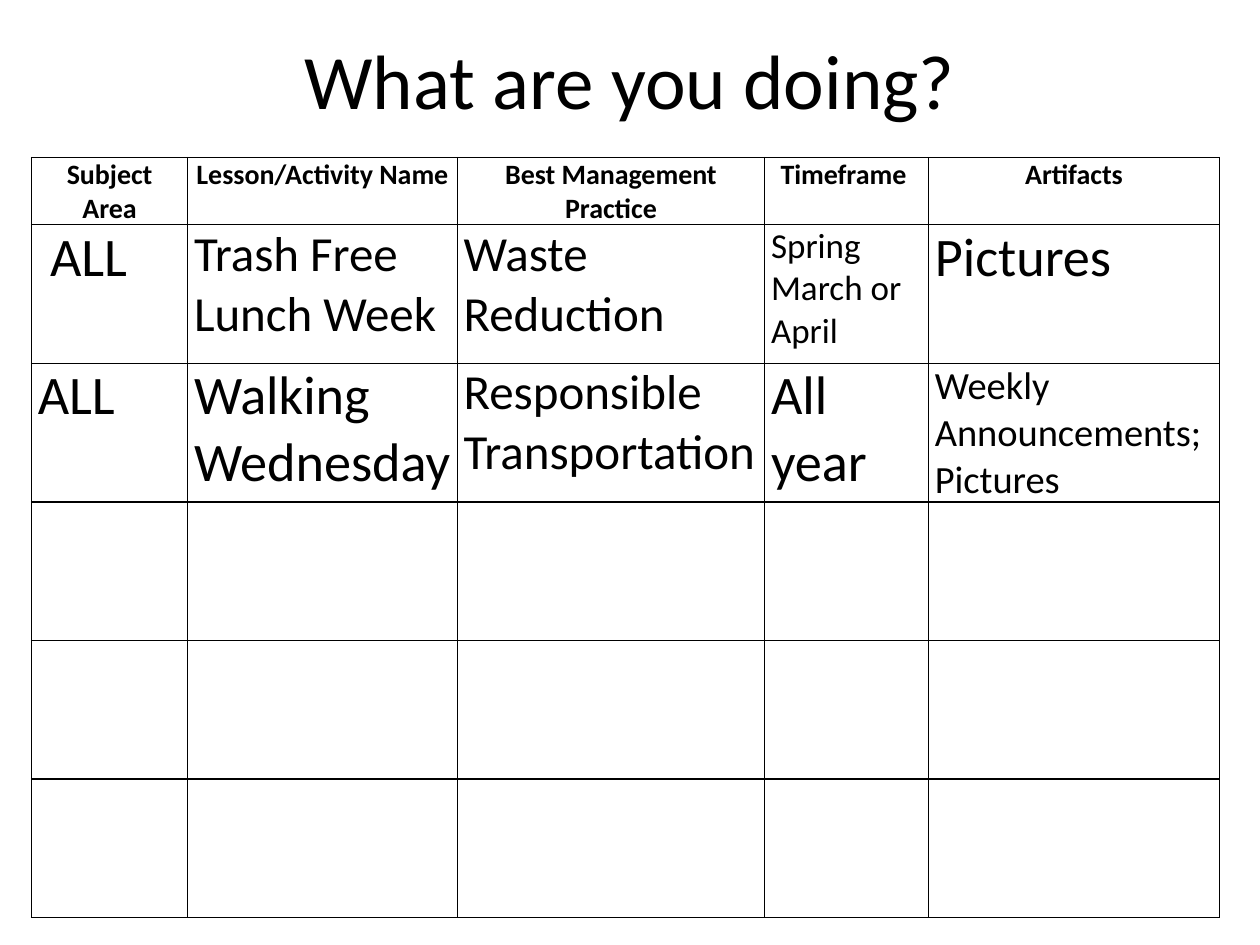
import pptx
import pptx.util
import pptx.dml.color
import pptx.enum.text
import pptx.oxml
import pptx.oxml.ns

COLORS = {"ink": "000000", "page": "FFFFFF"}
FONT = "Calibri"
HEADING = "What are you doing?"
HEADING_SIZE, HEADER_SIZE = 44, 16
HEADERS = ["Subject Area", "Lesson/Activity Name", "Best Management Practice",
           "Timeframe ", "Artifacts"]
# Each entry: paragraphs of the cell, text size
ACTIVITIES = [
    [([" ALL"], 31), (["Trash Free Lunch Week"], 28), (["Waste Reduction"], 28),
     (["Spring", "March or April"], 20), (["Pictures"], 31)],
    [(["ALL"], 31), (["Walking Wednesday"], 31), (["Responsible Transportation"], 28),
     (["All year"], 31), (["Weekly Announcements; Pictures"], 22)],
]
BLANK_ROWS = 3
COLUMN_WIDTHS = [1.24, 2.14, 2.44, 1.3, 2.31]
HEADER_HEIGHT, ACTIVITY_HEIGHT = 0.35, 1.1
SLIDE_WIDTH, SLIDE_HEIGHT = 10, 7.5
HEADING_HEIGHT = SLIDE_HEIGHT / 6
HEADING_MARGIN, TABLE_LEFT = SLIDE_WIDTH * 0.05, SLIDE_WIDTH * 0.025
CELL_INSET = 0.05

inches = pptx.util.Inches
ALIGN = pptx.enum.text.PP_ALIGN
ANCHOR = pptx.enum.text.MSO_ANCHOR


def rgb(name):
    return pptx.dml.color.RGBColor.from_string(COLORS[name])


def write(frame, paragraphs, size, align, bold=False):
    for index, text in enumerate(paragraphs):
        paragraph = frame.paragraphs[0] if index == 0 else frame.add_paragraph()
        paragraph.alignment = align
        run = paragraph.add_run()
        run.text = text
        run.font.name = FONT
        run.font.size = pptx.util.Pt(size)
        run.font.bold = bold
        run.font.color.rgb = rgb("ink")


def rule_cell(cell):
    """Draw a one-point line on all four sides of the cell."""
    properties = cell._tc.get_or_add_tcPr()
    for index, side in enumerate(("lnL", "lnR", "lnT", "lnB")):
        properties.insert(index, pptx.oxml.parse_xml(
            f'<a:{side} {pptx.oxml.ns.nsdecls("a")} w="{pptx.util.Pt(1)}">'
            f'<a:solidFill><a:srgbClr val="{COLORS["ink"]}"/></a:solidFill></a:{side}>'))


def add_heading(slide):
    box = slide.shapes.add_textbox(
        inches(HEADING_MARGIN), 0,
        inches(SLIDE_WIDTH - 2 * HEADING_MARGIN), inches(HEADING_HEIGHT))
    box.text_frame.word_wrap = True
    box.text_frame.vertical_anchor = ANCHOR.MIDDLE
    write(box.text_frame, [HEADING], HEADING_SIZE, ALIGN.CENTER)


def add_plan(slide):
    rows = [[([label], HEADER_SIZE) for label in HEADERS]] + ACTIVITIES
    rows += [[([], HEADER_SIZE)] * len(HEADERS)] * BLANK_ROWS
    heights = [HEADER_HEIGHT] + [ACTIVITY_HEIGHT] * (len(rows) - 1)
    plan = slide.shapes.add_table(
        len(rows), len(HEADERS), inches(TABLE_LEFT), inches(HEADING_HEIGHT),
        inches(sum(COLUMN_WIDTHS)), inches(sum(heights))).table
    plan.first_row = plan.horz_banding = False
    for column, width in zip(plan.columns, COLUMN_WIDTHS):
        column.width = inches(width)
    for r, (entries, height) in enumerate(zip(rows, heights)):
        plan.rows[r].height = inches(height)
        for c, (paragraphs, size) in enumerate(entries):
            cell = plan.cell(r, c)
            cell.margin_left = cell.margin_right = inches(CELL_INSET)
            cell.margin_top = cell.margin_bottom = 0
            cell.fill.background()
            rule_cell(cell)
            write(cell.text_frame, paragraphs, size,
                  ALIGN.LEFT if r else ALIGN.CENTER, bold=r == 0)


def main():
    deck = pptx.Presentation()
    deck.slide_width, deck.slide_height = inches(SLIDE_WIDTH), inches(SLIDE_HEIGHT)
    slide = deck.slides.add_slide(deck.slide_layouts[6])
    slide.background.fill.solid()
    slide.background.fill.fore_color.rgb = rgb("page")
    add_heading(slide)
    add_plan(slide)
    deck.save("out.pptx")


if __name__ == "__main__":
    main()
